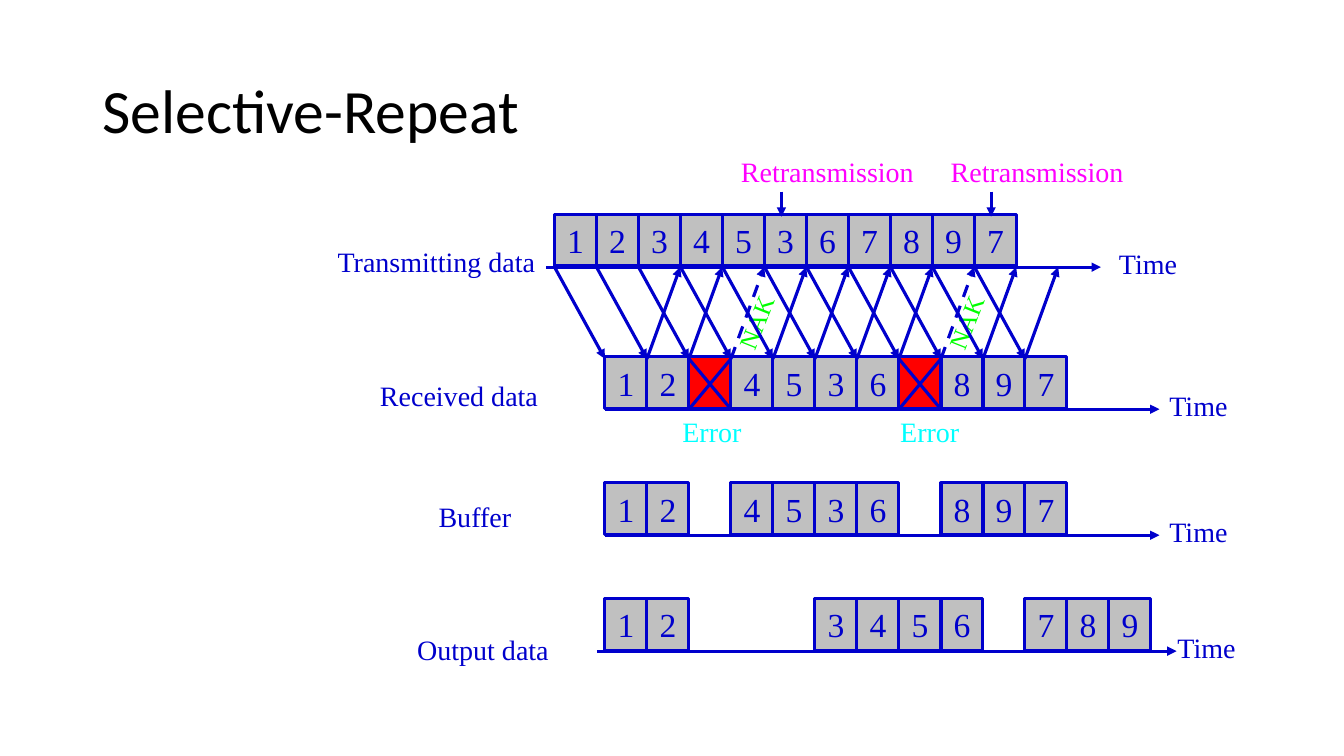
from collections import namedtuple

from lxml import etree
from pptx import Presentation
from pptx.dml.color import RGBColor
from pptx.enum.dml import MSO_LINE
from pptx.enum.shapes import MSO_CONNECTOR, MSO_SHAPE
from pptx.enum.text import MSO_ANCHOR, PP_ALIGN
from pptx.oxml.ns import qn
from pptx.util import Inches, Pt

BLACK = RGBColor(0x00, 0x00, 0x00)
BLUE = RGBColor(0x00, 0x00, 0xCC)
GRAY = RGBColor(0xC0, 0xC0, 0xC0)
RED = RGBColor(0xFF, 0x00, 0x00)
GREEN = RGBColor(0x00, 0xFF, 0x00)
CYAN = RGBColor(0x00, 0xFF, 0xFF)
MAGENTA = RGBColor(0xFF, 0x00, 0xFF)
LEFT, CENTER = PP_ALIGN.LEFT, PP_ALIGN.CENTER
TOP, MIDDLE = MSO_ANCHOR.TOP, MSO_ANCHOR.MIDDLE
STRAIGHT, RECTANGLE, DASH = MSO_CONNECTOR.STRAIGHT, MSO_SHAPE.RECTANGLE, MSO_LINE.DASH

SLIDE_WIDTH, SLIDE_HEIGHT = 13.33, 7.5
COLUMN = SLIDE_WIDTH / 32
CELL_HEIGHT = 0.51
AXIS_DROP = 0.52
TIME_DROP = 0.27
LINE_HEIGHT = 0.43
LINE_WIDTH = 2.25
ACK_SHIFT = 0.33
NAK_ANGLE = 291.7
GAP, LOST = ".", "x"

Lane = namedtuple("Lane", "label label_left label_drop align frames left top axis_start axis_end time_left")
TRANSMITTED = Lane("Transmitting data", 3.25, 0.25, LEFT, "12345367897", 5.5, 2.13, 5.42, 10.92, 11)
RECEIVED = Lane("Received data", 3.67, 0.17, LEFT, "12x4536x897", 6, 3.54, 6, 11.5, 11.5)
BUFFER = Lane("Buffer", 3.67, 0.12, CENTER, "12.4536.897", 6, 4.79, 6, 11.5, 11.5)
OUTPUT = Lane("Output data", 3.75, 0.29, CENTER, "12...3456.789", 6, 5.94, 5.92, 11.67, 11.58)


def write(shape, text, size=20, color=BLUE, font="Times New Roman", align=LEFT, anchor=TOP, spacing=1.0):
    """Put one formatted paragraph into a shape."""
    frame = shape.text_frame
    frame.word_wrap = True
    frame.vertical_anchor = anchor
    para = frame.paragraphs[0]
    para.alignment = align
    para.line_spacing = spacing
    span = para.add_run()
    span.text = text
    span.font.size = Pt(size)
    span.font.name = font
    span.font.color.rgb = color


def add_text(page, text, left, top, width, height=LINE_HEIGHT, angle=0, **style):
    """Add a text box, turned by an angle."""
    box = page.shapes.add_textbox(Inches(left), Inches(top), Inches(width), Inches(height))
    box.rotation = angle
    write(box, text, **style)


def add_line(page, start, end, arrow=True, dashed=False):
    """Draw a straight blue line between two points."""
    line = page.shapes.add_connector(STRAIGHT, *(Inches(value) for value in (*start, *end)))
    line.line.color.rgb = BLUE
    line.line.width = Pt(LINE_WIDTH)
    if dashed:
        line.line.dash_style = DASH
    if arrow:
        etree.SubElement(line.line._get_or_add_ln(), qn("a:tailEnd"), type="triangle")
    etree.SubElement(line._element.spPr, qn("a:effectLst"))


def add_frame(page, frame, left, top):
    """Draw one data frame, crossed out when it is lost."""
    cell = page.shapes.add_shape(RECTANGLE, Inches(left), Inches(top), Inches(COLUMN), Inches(CELL_HEIGHT))
    cell.shadow.inherit = False
    cell.fill.solid()
    cell.fill.fore_color.rgb = RED if frame == LOST else GRAY
    cell.line.color.rgb = BLUE
    cell.line.width = Pt(LINE_WIDTH)
    if frame == LOST:
        right, upper, lower = left + COLUMN, top + 0.02, top + AXIS_DROP
        add_line(page, (left, upper), (right, lower), arrow=False)
        add_line(page, (right, upper), (left, lower), arrow=False)
    else:
        cell.text_frame.margin_left = cell.text_frame.margin_right = 0
        write(cell, frame, size=24, align=CENTER, anchor=MIDDLE)


def add_lane(page, lane):
    """Draw a labelled time axis with its row of frames."""
    axis = lane.top + AXIS_DROP
    add_line(page, (lane.axis_start, axis), (lane.axis_end, axis))
    label_width = 2.33 if lane is TRANSMITTED else 2.08
    add_text(page, lane.label, lane.label_left, lane.top + lane.label_drop, label_width, align=lane.align)
    add_text(page, "Time", lane.time_left, lane.top + TIME_DROP, 0.83)
    for index, frame in enumerate(lane.frames):
        if frame != GAP:
            add_frame(page, frame, lane.left + index * COLUMN, lane.top)


def add_exchange(page, sender, receiver):
    """Draw the frames going down and the replies going up between two lanes."""
    upper, lower = sender.top + AXIS_DROP, receiver.top + 0.02
    for index in range(len(sender.frames)):
        sent = sender.left + index * COLUMN
        arrived = receiver.left + index * COLUMN
        add_line(page, (sent, upper), (arrived, lower))
        if index:
            refused = receiver.frames[index - 1] == LOST
            add_line(page, (arrived, lower), (arrived + ACK_SHIFT, upper), dashed=refused)
            if refused:
                add_text(page, "NAK", arrived - 0.14, upper + 0.32, 0.79, 0.4, NAK_ANGLE, size=18, color=GREEN)


def add_notices(page):
    """Mark the retransmissions above and the errors below the exchange."""
    for left in (7.25, 9.33):
        add_text(page, "Retransmission", left, 1.48, 2.08, color=MAGENTA)
        add_line(page, (left + 0.5, 1.9), (left + 0.5, 2.15))
    for left in (6.67, 8.83):
        add_text(page, "Error", left, 4.06, 1.17, color=CYAN)


def build_selective_repeat(deck):
    """Build the slide on the selective-repeat protocol."""
    page = deck.slides.add_slide(deck.slide_layouts[6])
    add_text(page, "Selective-Repeat", 0.92, 0.4, 11.5, 1.45,
             size=44, color=BLACK, font="Calibri", anchor=MIDDLE, spacing=0.9)
    for lane in (TRANSMITTED, RECEIVED, BUFFER, OUTPUT):
        add_lane(page, lane)
    add_exchange(page, TRANSMITTED, RECEIVED)
    add_notices(page)


def main():
    """Create the deck and save it."""
    deck = Presentation()
    deck.slide_width = Inches(SLIDE_WIDTH)
    deck.slide_height = Inches(SLIDE_HEIGHT)
    build_selective_repeat(deck)
    deck.save("out.pptx")


if __name__ == "__main__":
    main()
